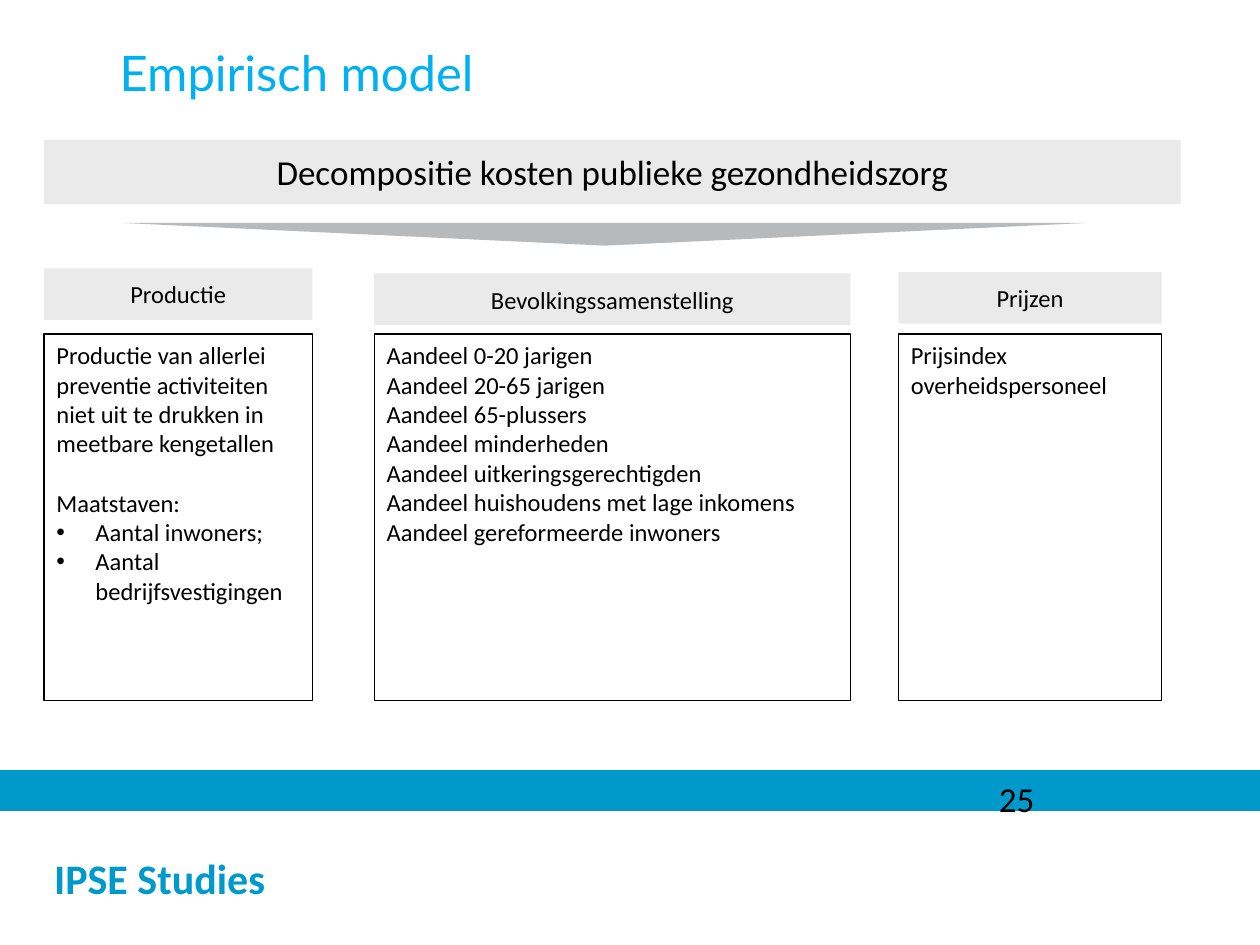
from lxml import etree
from pptx import Presentation
from pptx.dml.color import RGBColor
from pptx.enum.shapes import MSO_SHAPE
from pptx.enum.text import MSO_ANCHOR, PP_ALIGN
from pptx.oxml.ns import qn
from pptx.util import Inches, Pt

RECT, TRIANGLE = MSO_SHAPE.RECTANGLE, MSO_SHAPE.ISOSCELES_TRIANGLE
TOP, MIDDLE = MSO_ANCHOR.TOP, MSO_ANCHOR.MIDDLE
LEFT, CENTER = PP_ALIGN.LEFT, PP_ALIGN.CENTER

THEME = {
    "white": "FFFFFF", "black": "000000", "brand": "0099CC", "title": "00B0F0",
    "head": "EAEAEA", "arrow": "B6BABD",
    "font": "Calibri", "title_font": "Lato",
    "title_size": 28, "footer_size": 24, "large": 20, "body": 14,
}

prs = Presentation()
prs.slide_width, prs.slide_height = Inches(10), Inches(7.5)
COL, ROW = prs.slide_width / 100, prs.slide_height / 75  # grid of 100 by 75
HANG = int(3.1 * COL)
s = prs.slides.add_slide(prs.slide_layouts[5])


def write(tf, text, size="body", color="black", font="font", bold=False,
          align=LEFT, anchor=TOP, gap_before=None):
    """Fill a frame line by line; a leading bullet makes a hanging list item."""
    tf.word_wrap = True
    tf.vertical_anchor = anchor
    for i, line in enumerate(text.split("\n")):
        p = tf.paragraphs[0] if i == 0 else tf.add_paragraph()
        p.alignment = align
        if line == gap_before:
            p.space_before = Pt(17)
        if line.startswith("•"):
            pPr = p._p.get_or_add_pPr()
            pPr.set("marL", str(HANG))
            pPr.set("indent", str(-HANG))
            etree.SubElement(pPr, qn("a:buFont")).set("typeface", "Arial")
            etree.SubElement(pPr, qn("a:buChar")).set("char", "•")
        r = p.add_run()
        r.text = line.lstrip("•")
        r.font.name, r.font.size = THEME[font], Pt(THEME[size])
        r.font.bold = bold
        r.font.color.rgb = RGBColor.from_string(THEME[color])


def add_box(x, y, w, h, fill, line=None, kind=RECT):
    """Add a plain shape placed in grid columns and rows."""
    sp = s.shapes.add_shape(kind, int(x * COL), int(y * ROW), int(w * COL), int(h * ROW))
    sp.shadow.inherit = False
    sp.fill.solid()
    sp.fill.fore_color.rgb = RGBColor.from_string(THEME[fill])
    if line:
        sp.line.color.rgb = RGBColor.from_string(THEME[line])
        sp.line.width = Pt(0.75)
    else:
        sp.line.fill.background()
    return sp


# Footer
footer = add_box(0, 64.4, 100, 10.6, "white")
footer.text_frame.margin_left = int(4.3 * COL)
write(footer.text_frame, "IPSE Studies", size="footer_size", color="brand",
      bold=True, anchor=MIDDLE)
add_box(0, 61.2, 100, 3.1, "brand", line="brand")
number = s.shapes.add_textbox(int(78.3 * COL), int(61.2 * ROW), int(20.8 * COL), int(2.5 * ROW))
write(number.text_frame, "25", size="large")

# Title
title = s.shapes.title
title.left, title.top = int(3.5 * COL), int(2.9 * ROW)
title.width, title.height = int(88.2 * COL), int(5.7 * ROW)
title.text_frame.margin_left = int(6 * COL)
write(title.text_frame, "Empirisch model", size="title_size", color="title",
      font="title_font")

# Banner and the arrow beneath it
banner = add_box(3.5, 11.1, 90.2, 5.1, "head")
write(banner.text_frame, "Decompositie kosten publieke gezondheidszorg",
      size="large", align=CENTER, anchor=MIDDLE)
arrow = add_box(9.8, 17.7, 76.4, 1.8, "arrow", kind=TRIANGLE)
arrow._element.spPr.find(qn("a:xfrm")).set("flipV", "1")

# Three columns: left, width, heading top, heading, body
columns = [
    (3.5, 21.3, 21.3, "Productie",
     "Productie van allerlei preventie activiteiten niet uit te drukken in "
     "meetbare kengetallen\nMaatstaven:\n•Aantal inwoners;\n•Aantal bedrijfsvestigingen"),
    (29.7, 37.8, 21.7, "Bevolkingssamenstelling",
     "Aandeel 0-20 jarigen\nAandeel 20-65 jarigen\nAandeel 65-plussers\n"
     "Aandeel minderheden\nAandeel uitkeringsgerechtigden\n"
     "Aandeel huishoudens met lage inkomens\nAandeel gereformeerde inwoners"),
    (71.3, 20.9, 21.6, "Prijzen", "Prijsindex overheidspersoneel"),
]
for x, w, y, heading, body in columns:
    head = add_box(x, y, w, 4.1, "head")
    write(head.text_frame, heading, align=CENTER, anchor=MIDDLE)
    panel = add_box(x, 26.5, w, 29.1, "white", line="black")
    write(panel.text_frame, body, gap_before="Maatstaven:")

prs.save("out.pptx")
